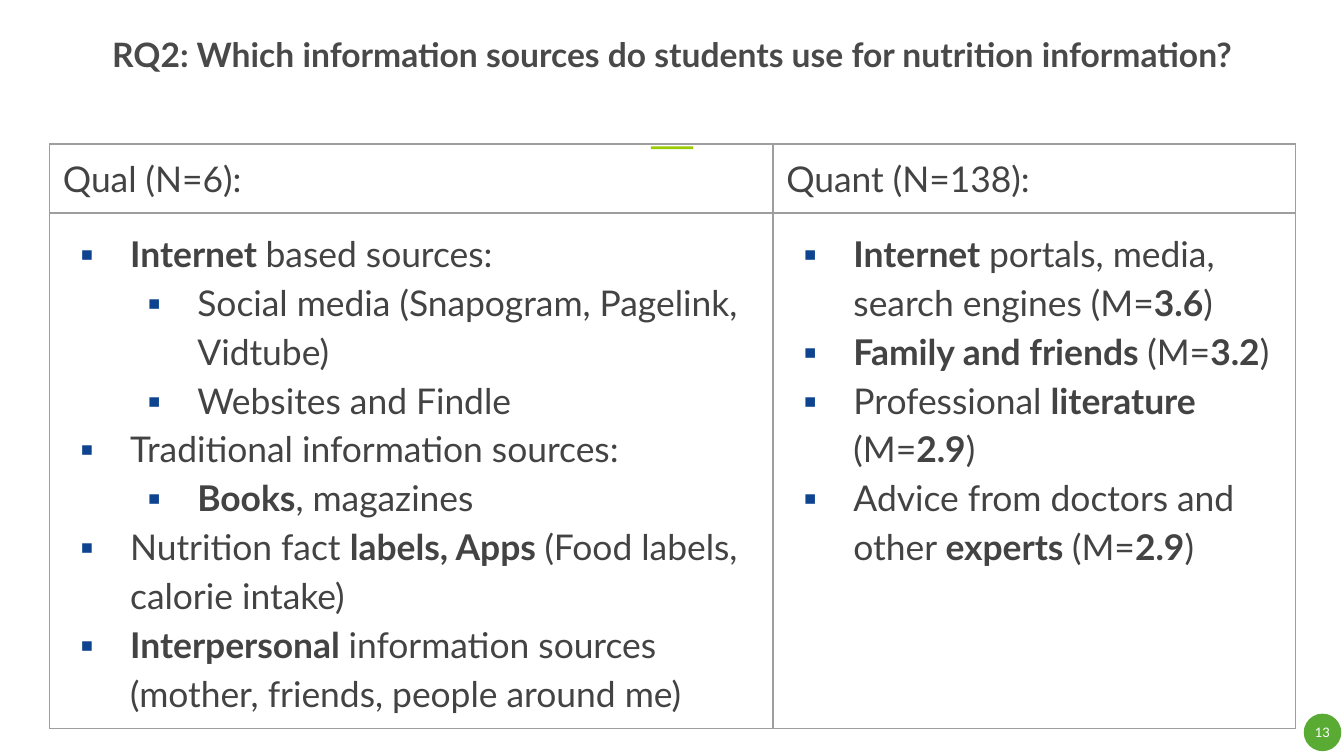
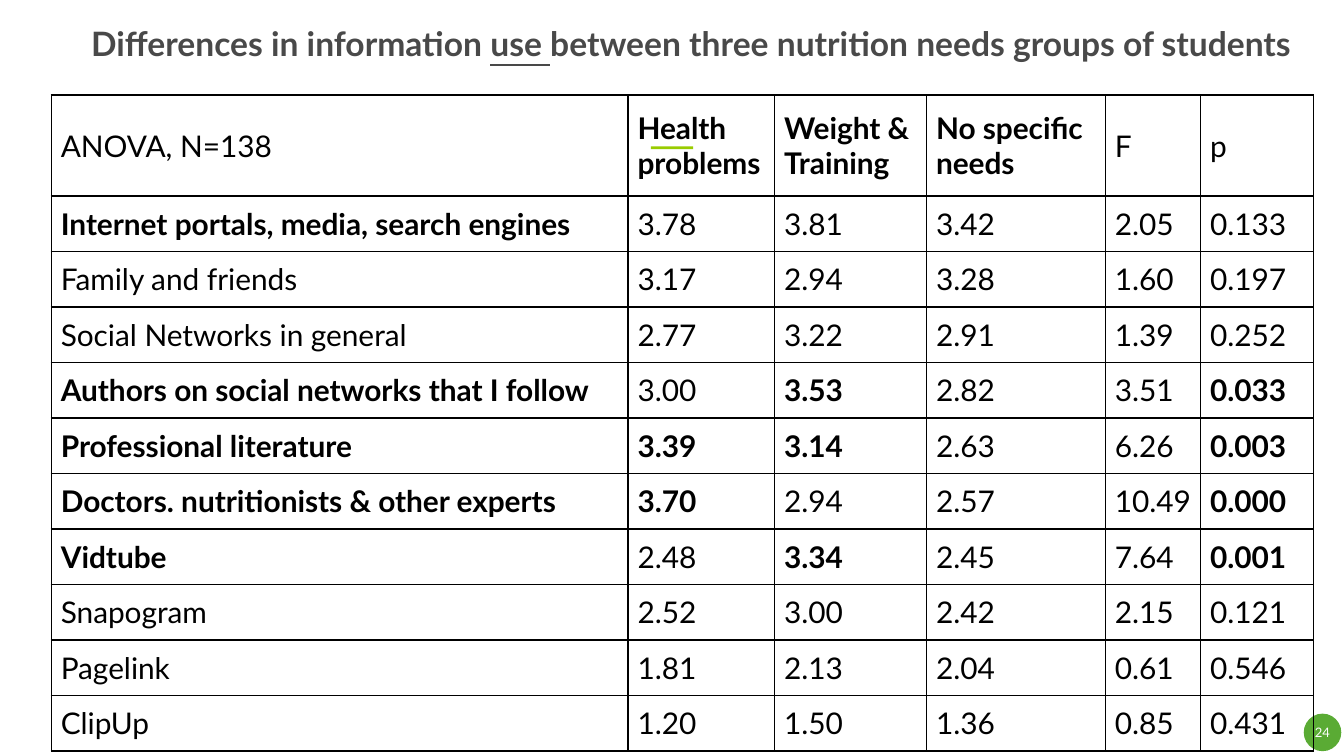
"""Build two slides on the sources students use for nutrition information."""
from lxml.etree import SubElement
from pptx import Presentation
from pptx.dml.color import RGBColor
from pptx.enum.shapes import MSO_SHAPE
from pptx.enum.text import MSO_ANCHOR, MSO_AUTO_SIZE, PP_ALIGN
from pptx.oxml import parse_xml
from pptx.oxml.ns import nsdecls, qn
from pptx.util import Cm, Pt

FONT = "Lato"
WHITE = RGBColor(0xFF, 0xFF, 0xFF)
BLACK = RGBColor(0x00, 0x00, 0x00)
TITLE_GREY = RGBColor(0x49, 0x49, 0x49)
TEXT_GREY = RGBColor(0x43, 0x43, 0x43)
BORDER_GREY = RGBColor(0x9E, 0x9E, 0x9E)
BULLET_BLUE = RGBColor(0x0E, 0x43, 0x90)
BADGE_GREEN = RGBColor(0x5A, 0xAB, 0x34)
ACCENT_GREEN = RGBColor(0x99, 0xCC, 0x00)

SLIDE_WIDTH, SLIDE_HEIGHT = Cm(25.4), Cm(14.29)
BADGE_BOX = Cm(24.64), Cm(13.49), Cm(0.71), Cm(0.71)
ACCENT_BOX = Cm(12.3), Cm(2.77), Cm(0.8), Cm(0.05)
BULLET_STEP, BULLET_HANG = Cm(1.27), Cm(0.95)

TITLE_FORMAT = {"name": FONT, "size": Pt(18), "bold": True}
BADGE_FORMAT = {"name": FONT, "size": Pt(7)}
SOURCES_FORMAT = {"name": FONT, "size": Pt(19)}
ANOVA_FORMAT = {"name": FONT, "size": Pt(16)}

SOURCES_SLIDE = {
    "title": "RQ2: Which information sources do students use for nutrition information?",
    "title_box": (Cm(0.41), Cm(0.2), Cm(24.59), Cm(1.65)),
    "number": "13",
}
SOURCES = [
    ("Qual (N=6):", [
        (0, "*Internet *based sources:"),
        (1, "Social media (Snapogram, Pagelink, Vidtube)"),
        (1, "Websites and Findle"),
        (0, "Traditional information sources:"),
        (1, "*Books*, magazines"),
        (0, "Nutrition fact *labels, Apps *(Food labels, calorie intake)"),
        (0, "*Interpersonal *information sources (mother, friends, people around me)"),
    ]),
    ("Quant (N=138):", [
        (0, "*Internet *portals, media, search engines (M=*3.6*)"),
        (0, "*Family and friends *(M=*3.2*)"),
        (0, "Professional *literature *(M=*2.9*)"),
        (0, "Advice from doctors and other *experts *(M=*2.9*)"),
    ]),
]

ANOVA_SLIDE = {
    "title": "Differences in information *use *between three nutrition needs groups of students",
    "title_box": (Cm(0.36), Cm(0.38), Cm(25.4), Cm(0.86)),
    "number": "24",
}
ANOVA = [
    ("ANOVA, N=138", "*Health problems*", "*Weight & Training*", "*No specific needs*", "F", "p"),
    ("*Internet portals, media, search engines*", "3.78", "3.81", "3.42", "2.05", "0.133"),
    ("Family and friends", "3.17", "2.94", "3.28", "1.60", "0.197"),
    ("Social Networks in general", "2.77", "3.22", "2.91", "1.39", "0.252"),
    ("*Authors on social networks that I follow*", "3.00", "*3.53*", "2.82", "3.51", "*0.033*"),
    ("*Professional literature*", "*3.39*", "*3.14*", "2.63", "6.26", "*0.003*"),
    ("*Doctors. nutritionists & other experts*", "*3.70*", "2.94", "2.57", "10.49", "*0.000*"),
    ("*Vidtube*", "2.48", "*3.34*", "2.45", "7.64", "*0.001*"),
    ("Snapogram", "2.52", "3.00", "2.42", "2.15", "0.121"),
    ("Pagelink", "1.81", "2.13", "2.04", "0.61", "0.546"),
    ("ClipUp", "1.20", "1.50", "1.36", "0.85", "0.431"),
]


def set_attributes(target, values):
    """Set every attribute named in a dict."""
    for name, value in values.items():
        setattr(target, name, value)


def set_margins(target, margin):
    """Give a cell or text frame the same margin on all sides."""
    for side in ("left", "right", "top", "bottom"):
        setattr(target, f"margin_{side}", margin)


def write_text(paragraph, text, font_format, color, emphasis="bold"):
    """Write runs, emphasising the parts between asterisks."""
    for index, part in enumerate(text.split("*")):
        if part:
            run = paragraph.add_run()
            run.text = part
            set_attributes(run.font, font_format)
            run.font.color.rgb = color
            if emphasis not in font_format or index % 2:
                setattr(run.font, emphasis, bool(index % 2))


def add_plain_shape(slide, kind, box, color):
    """Add a filled shape with neither line nor shadow."""
    shape = slide.shapes.add_shape(kind, *box)
    shape.shadow.inherit = False
    shape.fill.solid()
    shape.fill.fore_color.rgb = color
    shape.line.fill.background()
    return shape


def add_base_slide(presentation, content):
    """Add a slide with its title, accent line and number badge."""
    slide = presentation.slides.add_slide(presentation.slide_layouts[5])
    title = slide.shapes.title
    set_attributes(title, dict(zip(("left", "top", "width", "height"), content["title_box"])))
    badge = add_plain_shape(slide, MSO_SHAPE.OVAL, BADGE_BOX, BADGE_GREEN)
    add_plain_shape(slide, MSO_SHAPE.RECTANGLE, ACCENT_BOX, ACCENT_GREEN)
    for shape, margin, text, font_format, color in (
        (title, Cm(0.05), content["title"], TITLE_FORMAT, TITLE_GREY),
        (badge, 0, content["number"], BADGE_FORMAT, WHITE),
    ):
        frame = shape.text_frame
        set_margins(frame, margin)
        set_attributes(frame, {"word_wrap": True, "auto_size": MSO_AUTO_SIZE.NONE,
                               "vertical_anchor": MSO_ANCHOR.MIDDLE})
        frame.paragraphs[0].alignment = PP_ALIGN.CENTER
        write_text(frame.paragraphs[0], text, font_format, color, "underline")
    return slide


def add_plain_table(slide, corner, widths, heights, margin, anchor, border, border_width):
    """Add an unfilled table with a uniform grid of borders."""
    frame = slide.shapes.add_table(len(heights), len(widths), *corner, sum(widths), sum(heights))
    table = frame.table
    set_attributes(table, {"first_row": False, "horz_banding": False})
    for column, width in zip(table.columns, widths):
        column.width = width
    for row, height in zip(table.rows, heights):
        row.height = height
    for cell in table.iter_cells():
        set_margins(cell, margin)
        cell.vertical_anchor = anchor
        cell.fill.background()
        properties = cell._tc.get_or_add_tcPr()
        for index, side in enumerate("LRTB"):
            properties.insert(index, parse_xml(
                f'<a:ln{side} {nsdecls("a")} w="{border_width}"><a:solidFill>'
                f'<a:srgbClr val="{border}"/></a:solidFill></a:ln{side}>'))
    return table


def add_bullet(paragraph, level):
    """Give a paragraph a square bullet and a hanging indent."""
    set_attributes(paragraph, {"level": level, "line_spacing": 1.15})
    properties = paragraph._p.get_or_add_pPr()
    properties.set("marL", str(BULLET_STEP * (level + 1)))
    properties.set("indent", str(-BULLET_HANG))
    color = SubElement(properties, qn("a:buClr"))
    SubElement(color, qn("a:srgbClr")).set("val", str(BULLET_BLUE))
    SubElement(properties, qn("a:buFont")).set("typeface", FONT)
    SubElement(properties, qn("a:buChar")).set("char", "▪")


def build_sources_slide(presentation):
    """Build the slide that sets qualitative beside quantitative results."""
    slide = add_base_slide(presentation, SOURCES_SLIDE)
    table = add_plain_table(slide, (Cm(0.94), Cm(2.72)), (Cm(13.67), Cm(9.88)),
                            (Cm(1.19), Cm(9.45)), Cm(0.25), MSO_ANCHOR.TOP, BORDER_GREY, Pt(0.75))
    for column, (heading, bullets) in enumerate(SOURCES):
        paragraph = table.cell(0, column).text_frame.paragraphs[0]
        paragraph.space_after = Pt(5)
        write_text(paragraph, heading, SOURCES_FORMAT, TEXT_GREY)
        frame = table.cell(1, column).text_frame
        for index, (level, text) in enumerate(bullets):
            paragraph = frame.add_paragraph() if index else frame.paragraphs[0]
            add_bullet(paragraph, level)
            write_text(paragraph, text, SOURCES_FORMAT, TEXT_GREY)


def build_anova_slide(presentation):
    """Build the slide that compares the three groups."""
    slide = add_base_slide(presentation, ANOVA_SLIDE)
    widths = [Cm(width) for width in (10.9, 2.77, 2.87, 3.38, 1.8, 2.13)]
    heights = [Cm(1.9)] + [Cm(1.05)] * (len(ANOVA) - 1)
    table = add_plain_table(slide, (Cm(0.97), Cm(1.8)), widths, heights, Cm(0.18),
                            MSO_ANCHOR.MIDDLE, BLACK, Pt(1))
    for row, values in enumerate(ANOVA):
        for column, text in enumerate(values):
            paragraph = table.cell(row, column).text_frame.paragraphs[0]
            write_text(paragraph, text, ANOVA_FORMAT, BLACK)


def main():
    """Create the presentation and save it."""
    presentation = Presentation()
    set_attributes(presentation, {"slide_width": SLIDE_WIDTH, "slide_height": SLIDE_HEIGHT})
    build_sources_slide(presentation)
    build_anova_slide(presentation)
    presentation.save("out.pptx")


if __name__ == "__main__":
    main()
